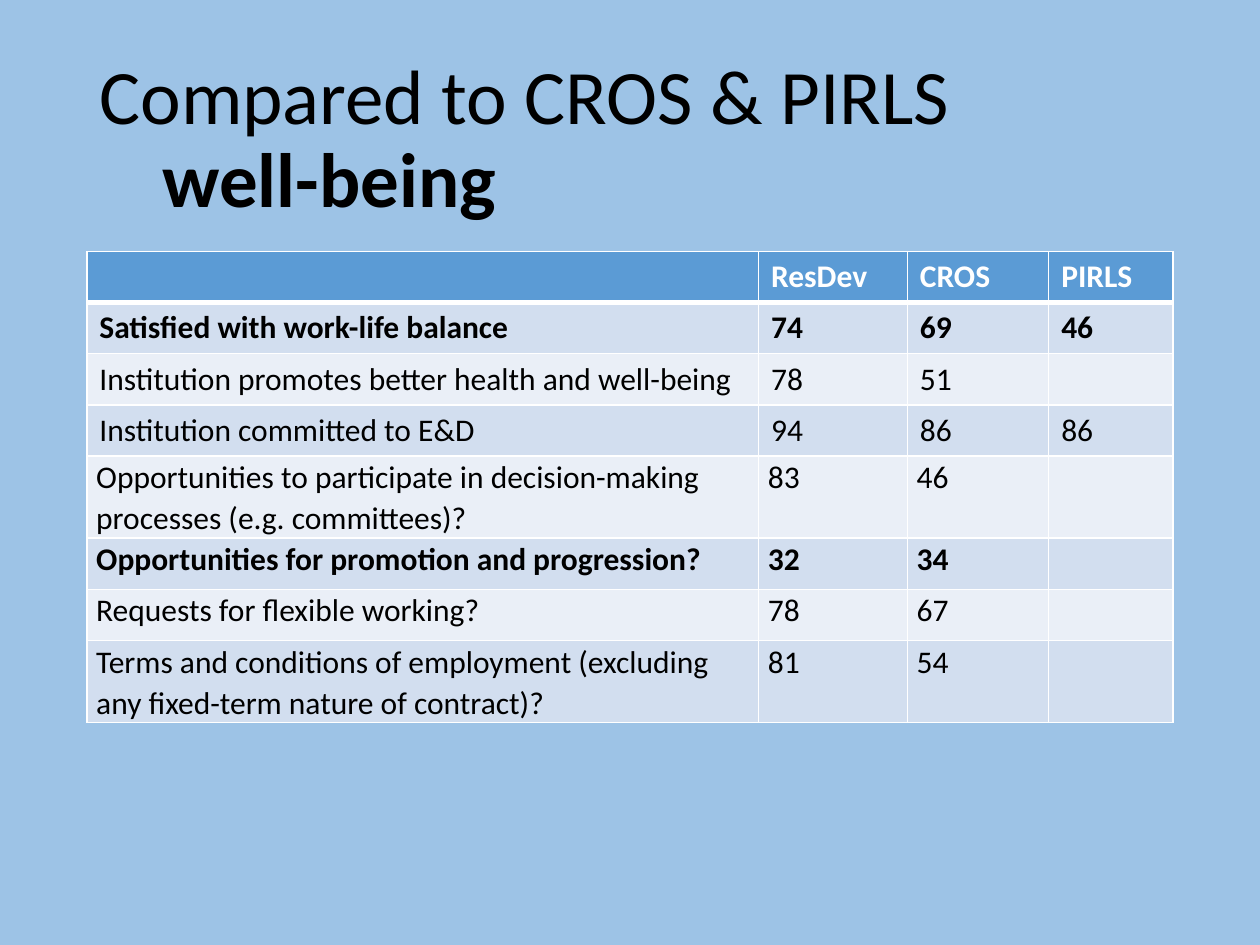
"""Build a slide comparing ResDev well-being results with CROS and PIRLS."""
from lxml import etree
from pptx import Presentation
from pptx.dml.color import RGBColor
from pptx.enum.text import MSO_ANCHOR, MSO_AUTO_SIZE, PP_ALIGN
from pptx.oxml.ns import qn
from pptx.util import Cm, Pt

LEFT = PP_ALIGN.LEFT
MIDDLE = MSO_ANCHOR.MIDDLE
NO_FIT = MSO_AUTO_SIZE.NONE
BACKGROUND = RGBColor(0x9D, 0xC3, 0xE6)
HEADER = RGBColor(0x5B, 0x9B, 0xD5)
BANDS = RGBColor(0xEA, 0xEF, 0xF7), RGBColor(0xD2, 0xDE, 0xEF)
BLACK = RGBColor(0, 0, 0)
WHITE = RGBColor(0xFF, 0xFF, 0xFF)
FONT = "Calibri"

TITLE = "Compared to CROS & PIRLS\v\twell-being"
ROWS = [
    ("", "ResDev", "CROS", "PIRLS"),
    ("Satisfied with work-life balance", "74", "69", "46"),
    ("Institution promotes better health and well-being", "78", "51", ""),
    ("Institution committed to E&D", "94", "86", "86"),
    ("Opportunities to participate in decision-making processes (e.g. committees)?", "83", "46", ""),
    ("Opportunities for promotion and progression?", "32", "34", ""),
    ("Requests for flexible working?", "78", "67", ""),
    ("Terms and conditions of employment (excluding any fixed-term nature of contract)?", "81", "54", ""),
]
BOLD_ROWS = {0, 1, 5}
FIRST_COMPACT_ROW = 4
COL_WIDTHS = [13.54, 3.0, 2.85, 2.51]
ROW_HEIGHT = 1.03
LEFT_EDGE, WIDTH = 1.75, 21.9


def format_run(r, size, color, bold):
    r.font.name = FONT
    r.font.size = Pt(size)
    r.font.color.rgb = color
    r.font.bold = bold


def add_borders(cell, widths):
    tc_pr = cell._tc.get_or_add_tcPr()
    for side, width in widths.items():
        ln = etree.SubElement(tc_pr, qn(f"a:ln{side}"), w=str(Pt(width)))
        fill = etree.SubElement(ln, qn("a:solidFill"))
        etree.SubElement(fill, qn("a:srgbClr"), val=str(WHITE))


def format_cell(cell, row, text):
    top = 3 if row == 1 else 1
    bottom = 3 if row == 0 else 1
    add_borders(cell, {"L": 1, "R": 1, "T": top, "B": bottom})
    cell.fill.solid()
    cell.fill.fore_color.rgb = BANDS[row % 2] if row else HEADER
    cell.text_frame.text = text
    p = cell.text_frame.paragraphs[0]
    for r in p.runs:
        format_run(r, 18, BLACK if row else WHITE, row in BOLD_ROWS)
    if text and row >= FIRST_COMPACT_ROW:
        p.line_spacing = 1.07
        cell.margin_left = cell.margin_right = Cm(0.19)
        cell.margin_top = cell.margin_bottom = Cm(0)


def add_title(s):
    title = s.shapes.title
    title.left, title.top, title.width, title.height = Cm(LEFT_EDGE), Cm(1.01), Cm(WIDTH), Cm(3.68)
    tf = title.text_frame
    tf.auto_size = NO_FIT
    tf.vertical_anchor = MIDDLE
    p = tf.paragraphs[0]
    p.text = TITLE
    p.alignment = LEFT
    p.line_spacing = 0.9
    for r, bold in zip(p.runs, (False, True)):
        format_run(r, 44, BLACK, bold)


def add_results(s):
    table = s.shapes.add_table(len(ROWS), len(COL_WIDTHS), Cm(LEFT_EDGE), Cm(5.07),
                               Cm(WIDTH), Cm(ROW_HEIGHT * len(ROWS))).table
    for column, width in zip(table.columns, COL_WIDTHS):
        column.width = Cm(width)
    for i, values in enumerate(ROWS):
        table.rows[i].height = Cm(ROW_HEIGHT)
        for j, text in enumerate(values):
            format_cell(table.cell(i, j), i, text)


def main():
    prs = Presentation()
    prs.slide_width, prs.slide_height = Cm(25.4), Cm(19.05)
    s = prs.slides.add_slide(prs.slide_layouts[5])
    s.background.fill.solid()
    s.background.fill.fore_color.rgb = BACKGROUND
    add_title(s)
    add_results(s)
    prs.save("out.pptx")


if __name__ == "__main__":
    main()
